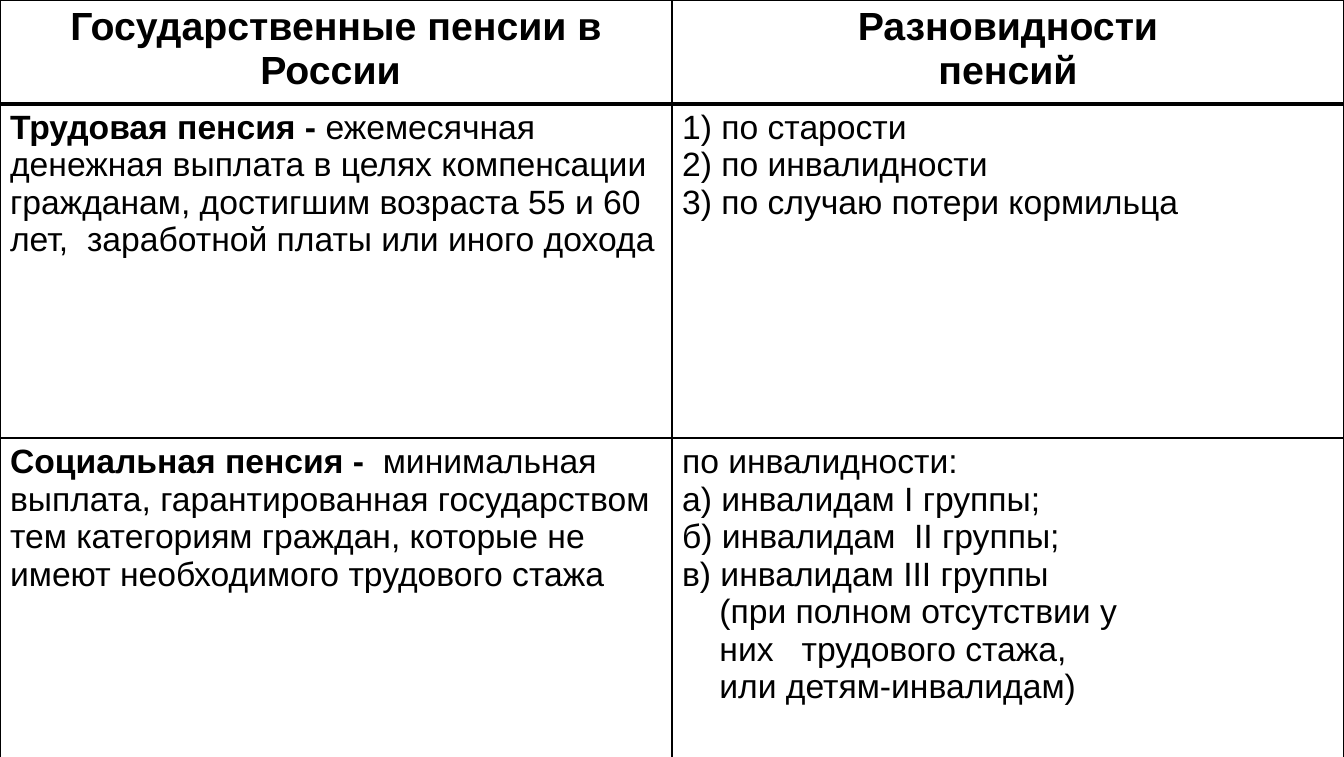
from lxml import etree
from pptx import Presentation, util as u
from pptx.dml.color import RGBColor
from pptx.enum.text import PP_ALIGN
from pptx.oxml.ns import qn

BLACK = RGBColor(0, 0, 0)
WHITE = RGBColor(255, 255, 255)
CREAM = RGBColor(0xEE, 0xEC, 0xE1)
FONT = "Arial"
WIDTH, HEIGHT = 13.31, 7.5
ROWS = (1.03, 3.31, 3.21)
THIN, THICK = 1, 3

HEADS = ("Государственные пенсии в России ", "Разновидности\nпенсий")
# Each pension: bold term, its meaning, its kinds, hanging indent, further lines
PENSIONS = (
    ("Трудовая пенсия -",
     " ежемесячная денежная выплата в целях компенсации гражданам, "
     "достигшим возраста 55 и 60 лет,  заработной платы или иного дохода",
     ("1) по старости", "2) по инвалидности", "3) по случаю потери кормильца"),
     0.38, ()),
    ("Социальная пенсия -",
     "  минимальная выплата, гарантированная государством тем категориям "
     "граждан, которые не имеют необходимого трудового стажа",
     ("по инвалидности:", "а) инвалидам I группы;",
      "б) инвалидам  II группы;", "в) инвалидам III группы"),
     0.5,
     ("(при полном отсутствии у", "них   трудового стажа,",
      "или детям-инвалидам)")),
)
NOTE_LEFT = 0.37


def write(para, words, size=24, bold=False, align=None, left=0, hang=0):
    for i, line in enumerate(words.split("\n")):
        if i:
            para.add_line_break()
        run = para.add_run()
        run.text = line
        font = run.font
        font.name, font.size, font.bold = FONT, u.Pt(size), bold
        font.color.rgb = BLACK
    if align is not None:
        para.alignment = align
    if left:
        props = para._p.get_or_add_pPr()
        props.set("marL", str(u.Inches(left)))
        props.set("indent", str(u.Inches(-hang)))


def frame(cell, top, bottom):
    """Draw the four borders of a cell and fill it."""
    props = cell._tc.get_or_add_tcPr()
    for side, width in zip("LRTB", (THIN, THIN, top, bottom)):
        line = etree.SubElement(props, qn(f"a:ln{side}"), w=str(u.Pt(width)))
        fill = etree.SubElement(line, qn("a:solidFill"))
        etree.SubElement(fill, qn("a:srgbClr"), val=str(BLACK))
    cell.fill.solid()
    cell.fill.fore_color.rgb = WHITE


def main():
    deck = Presentation()
    deck.slide_width, deck.slide_height = u.Inches(WIDTH), u.Inches(HEIGHT)
    slide = deck.slides.add_slide(deck.slide_layouts[6])
    back = slide.background.fill
    back.solid()
    back.fore_color.rgb = CREAM

    table = slide.shapes.add_table(
        len(ROWS), len(HEADS), 0, 0, deck.slide_width, u.Inches(sum(ROWS))).table
    for r, high in enumerate(ROWS):
        table.rows[r].height = u.Inches(high)
        for cell in table.rows[r].cells:
            frame(cell, THICK if r == 1 else THIN, THICK if r == 0 else THIN)

    for c, head in enumerate(HEADS):
        write(table.cell(0, c).text_frame.paragraphs[0], head,
              size=28, bold=True, align=PP_ALIGN.CENTER)

    for r, (term, sense, kinds, hang, notes) in enumerate(PENSIONS, 1):
        para = table.cell(r, 0).text_frame.paragraphs[0]
        write(para, term, bold=True)
        write(para, sense)

        body = table.cell(r, 1).text_frame
        lines = [(kind, hang, hang) for kind in kinds]
        lines += [(note, NOTE_LEFT, 0) for note in notes]
        for i, (words, left, inset) in enumerate(lines):
            para = body.add_paragraph() if i else body.paragraphs[0]
            write(para, words, left=left, hang=inset)

    deck.save("out.pptx")


if __name__ == "__main__":
    main()
